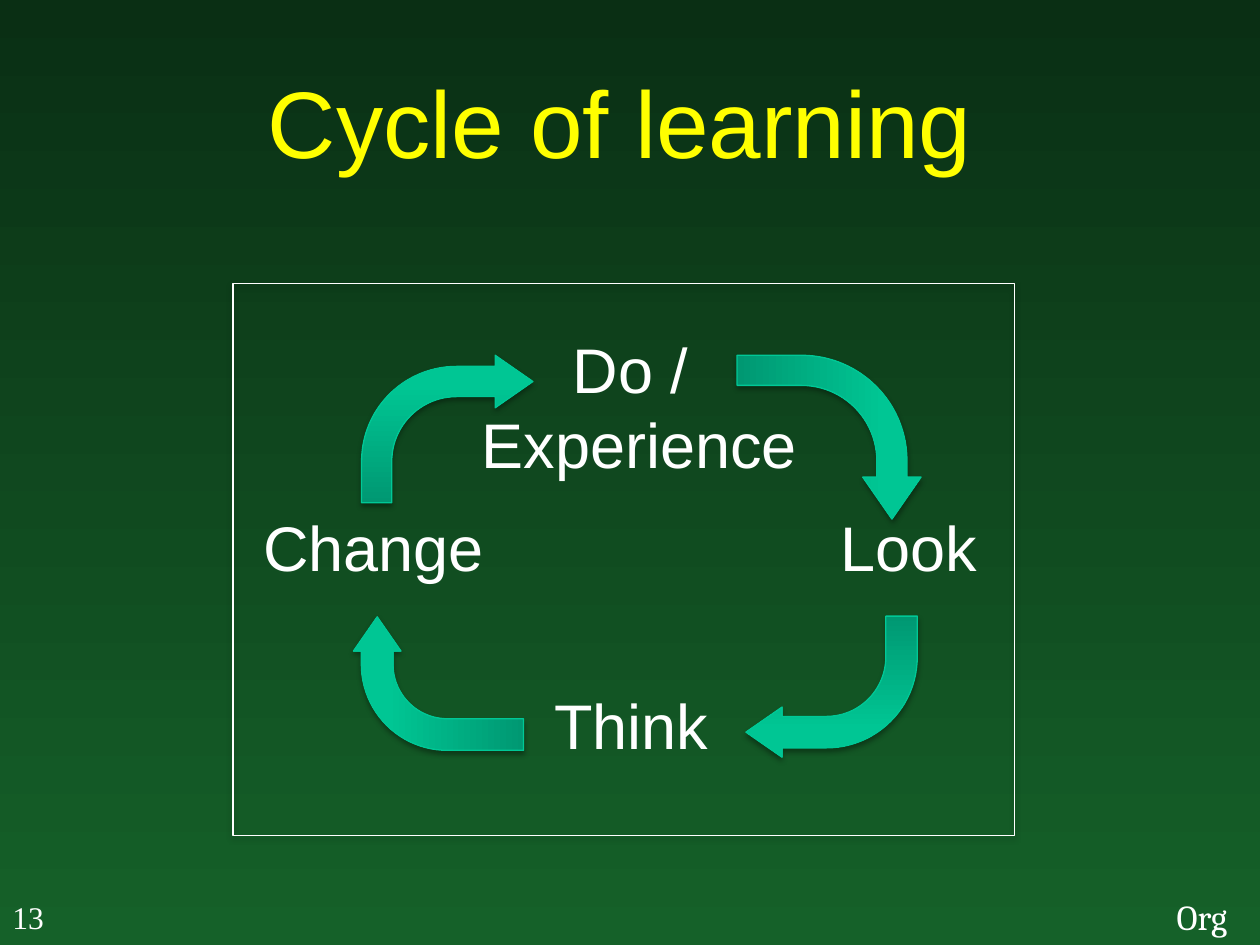
import copy
import lxml.etree
import pptx
import pptx.dml.color
import pptx.enum.shapes
import pptx.enum.text
import pptx.oxml
import pptx.oxml.ns
import pptx.util

Inches = pptx.util.Inches
Pt = pptx.util.Pt
Shape = pptx.enum.shapes.MSO_SHAPE
Align = pptx.enum.text.PP_ALIGN
Anchor = pptx.enum.text.MSO_ANCHOR
tint = pptx.dml.color.RGBColor.from_string
qn = pptx.oxml.ns.qn

SHADE = (
    f'<a:outerShdw {pptx.oxml.ns.nsdecls("a")} blurRad="{Pt(3.1)}" dist="{Pt(1.8)}"'
    ' dir="5400000" rotWithShape="0"><a:srgbClr val="000000">'
    '<a:alpha val="35000"/></a:srgbClr></a:outerShdw>'
)


def draw(kind, box, line):
    shape = slide.shapes.add_shape(kind, *map(Inches, box))
    shape.line.color.rgb = tint(line)
    shape.line.width = Pt(0.75)
    shape.shadow.inherit = False
    glow = shape._element.spPr.find(qn("a:effectLst"))
    glow.append(pptx.oxml.parse_xml(SHADE))
    return shape


deck = pptx.Presentation()
deck.slide_width = Inches(10)
deck.slide_height = Inches(7.5)
slide = deck.slides.add_slide(deck.slide_layouts[6])

back = slide.background.fill
back.gradient()
back.gradient_angle = 270
for stop, color in zip(back.gradient_stops, ("0A2F14", "156129")):
    stop.color.rgb = tint(color)

labels = [
    ("Org", (9.24, 7.06, 0.73, 0.44), 20, "Cambria", "FFFFFF", Align.LEFT, False),
    ("Cycle of learning", (0.67, 0.33, 8.5, 1.25), 54, "Arial", "FFFF00", Align.CENTER, True),
    ("13", (0, 7.08, 0.45, 0.4), 18, "Times New Roman", "FFFFFF", Align.LEFT, False),
    ("Do / \nExperience", (3.71, 2.57, 2.73, 1.31), 36, "Arial", "FFFFFF", Align.CENTER, False),
    ("Look", (6.37, 3.99, 1.68, 0.71), 36, "Arial", "FFFFFF", Align.CENTER, True),
    ("Think", (4.3, 5.4, 1.82, 0.71), 36, "Arial", "FFFFFF", Align.LEFT, True),
    ("Change", (1.99, 3.99, 2.31, 0.71), 36, "Arial", "FFFFFF", Align.LEFT, True),
]
for text, box, size, font, color, align, wrap in labels:
    frame = slide.shapes.add_textbox(*map(Inches, box)).text_frame
    frame.word_wrap = wrap
    frame.vertical_anchor = Anchor.MIDDLE if size == 54 else Anchor.TOP
    frame.text = text
    for para in frame.paragraphs:
        para.alignment = align
        para.font.size = Pt(size)
        para.font.name = font
        para.font.color.rgb = tint(color)

border = draw(Shape.RECTANGLE, (1.85, 2.25, 6.2, 4.38), "FFFFFF")
border.fill.background()

arrows = [
    ((5.93, 2.74, 1.3, 1.46), 90, 0.184),
    ((5.92, 4.89, 1.36, 1.12), 180, 0.223),
    ((2.95, 4.75, 1.06, 1.35), 270, 0.237),
    ((2.87, 2.82, 1.36, 1.17), 0, 0.205),
]
for box, turn, girth in arrows:
    arrow = draw(Shape.BENT_ARROW, box, "00C896")
    arrow.rotation = turn
    for slot, value in enumerate((girth, 0.178, 0.256, 0.644)):
        arrow.adjustments[slot] = value
    arrow.fill.gradient()
    arrow.fill.gradient_angle = 90
    stops = arrow._element.spPr.find(".//" + qn("a:gsLst"))
    stops.append(copy.deepcopy(stops[0]))
    ramp = ((0, "009872"), (0.8, "00C694"), (1, "00C795"))
    for stop, (place, color) in zip(arrow.fill.gradient_stops, ramp):
        stop.position = place
        stop.color.rgb = tint(color)

deck.save("out.pptx")
